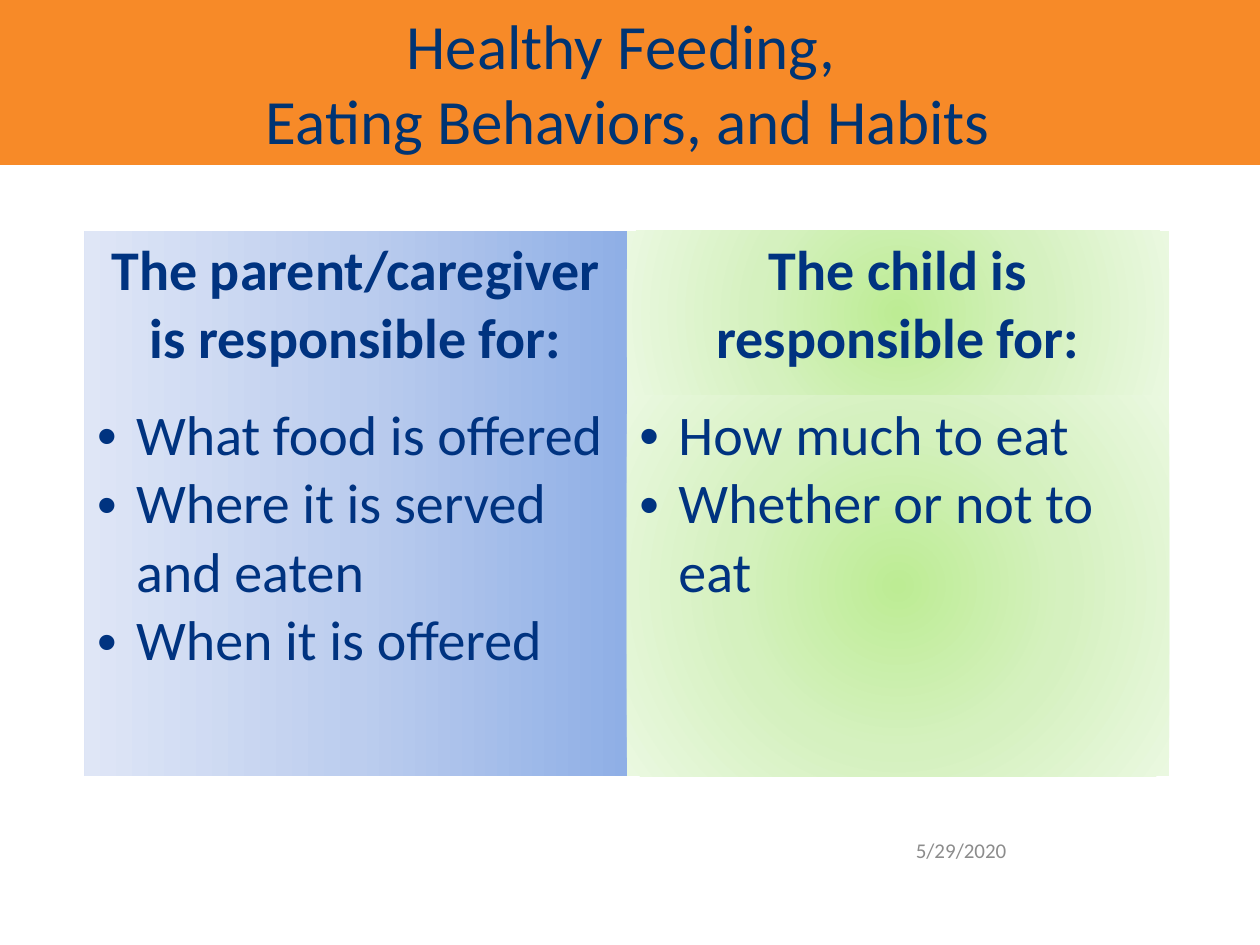
from dataclasses import dataclass

from lxml import etree
from pptx import Presentation
from pptx import util as u
from pptx.dml.color import RGBColor
from pptx.enum import shapes, text
from pptx.oxml import parse_xml
from pptx.oxml.ns import nsdecls, qn

WIDTH, HEIGHT = 10, 7.5
FONT = "Calibri"
NAVY, TITLE_NAVY, ORANGE, GRAY = "003380", "003473", "F78A28", "8C8C8C"
PLAIN_TABLE = "{2D5ABB26-0587-4C30-8999-92F81FD0307C}"
BULLET_INDENT = u.Inches(0.31)

# Gradient directions
LINEAR = '<a:lin ang="10800000" scaled="0"/>'
RADIAL = ('<a:path path="circle">'
          '<a:fillToRect l="50000" t="50000" r="50000" b="50000"/></a:path>')


@dataclass
class Duty:
    heading: str
    items: list[str]
    stops: tuple[str, str, str]
    direction: str


DUTIES = [
    Duty("The parent/caregiver is responsible for:",
         ["What food is offered", "Where it is served and eaten", "When it is offered"],
         ("8FAFE6", "BCCDEE", "DFE6F6"), LINEAR),
    Duty("The child is responsible for:",
         ["How much to eat", "Whether or not to eat"],
         ("BDEC94", "D5F1BF", "EAF8E0"), RADIAL),
]


def color(value: str) -> RGBColor:
    return RGBColor.from_string(value)


def write(frame, lines: list[str], size: float, ink: str, bold: bool = False,
          align=text.PP_ALIGN.LEFT, bullets: bool = False) -> None:
    frame.word_wrap = True
    frame.text = "\n".join(lines)
    for para in frame.paragraphs:
        para.alignment = align
        if bullets:
            props = para._p.get_or_add_pPr()
            props.set("marL", str(BULLET_INDENT))
            props.set("indent", str(-BULLET_INDENT))
            etree.SubElement(props, qn("a:buFont")).set("typeface", "Arial")
            etree.SubElement(props, qn("a:buChar")).set("char", "•")
        for span in para.runs:
            span.font.name = FONT
            span.font.size = u.Pt(size)
            span.font.bold = bold
            span.font.color.rgb = color(ink)


def fill_gradient(cell, duty: Duty) -> None:
    stops = "".join(f'<a:gs pos="{i * 50000}"><a:srgbClr val="{stop}"/></a:gs>'
                    for i, stop in enumerate(duty.stops))
    cell._tc.get_or_add_tcPr().append(parse_xml(
        f'<a:gradFill {nsdecls("a")} rotWithShape="1"><a:gsLst>{stops}</a:gsLst>'
        f'{duty.direction}</a:gradFill>'))


def add_duties(page) -> None:
    rows = (1.31, 3.02)
    frame = page.shapes.add_table(len(rows), len(DUTIES), u.Inches(0.67), u.Inches(1.83),
                                  u.Inches(8.61), u.Inches(sum(rows)))
    table = frame.table
    table.first_row = table.horz_banding = False
    table._tbl.tblPr.find(qn("a:tableStyleId")).text = PLAIN_TABLE
    for row, height in zip(table.rows, rows):
        row.height = u.Inches(height)
    for column, duty in enumerate(DUTIES):
        heading, body = table.cell(0, column), table.cell(1, column)
        write(heading.text_frame, [duty.heading], 32, NAVY, bold=True,
              align=text.PP_ALIGN.CENTER)
        write(body.text_frame, duty.items, 32, NAVY, bullets=True)
        for cell in (heading, body):
            fill_gradient(cell, duty)


def add_title(page) -> None:
    banner = page.shapes.add_shape(shapes.MSO_SHAPE.RECTANGLE, u.Inches(-0.03), 0,
                                   u.Inches(WIDTH + 0.03), u.Inches(1.31))
    banner.shadow.inherit = False
    banner.fill.solid()
    banner.fill.fore_color.rgb = color(ORANGE)
    banner.line.fill.background()
    banner.text_frame.vertical_anchor = text.MSO_ANCHOR.TOP
    write(banner.text_frame, ["Healthy Feeding, ", "Eating Behaviors, and Habits"],
          36, TITLE_NAVY, align=text.PP_ALIGN.CENTER)


def add_date(page) -> None:
    box = page.shapes.add_textbox(u.Inches(7.17), u.Inches(6.5),
                                  u.Inches(2.33), u.Inches(0.49))
    box.text_frame.vertical_anchor = text.MSO_ANCHOR.MIDDLE
    write(box.text_frame, ["5/29/2020"], 12, GRAY)


def main() -> None:
    deck = Presentation()
    deck.slide_width, deck.slide_height = u.Inches(WIDTH), u.Inches(HEIGHT)
    page = deck.slides.add_slide(deck.slide_layouts[6])
    add_duties(page)
    add_title(page)
    add_date(page)
    deck.save("out.pptx")


if __name__ == "__main__":
    main()
